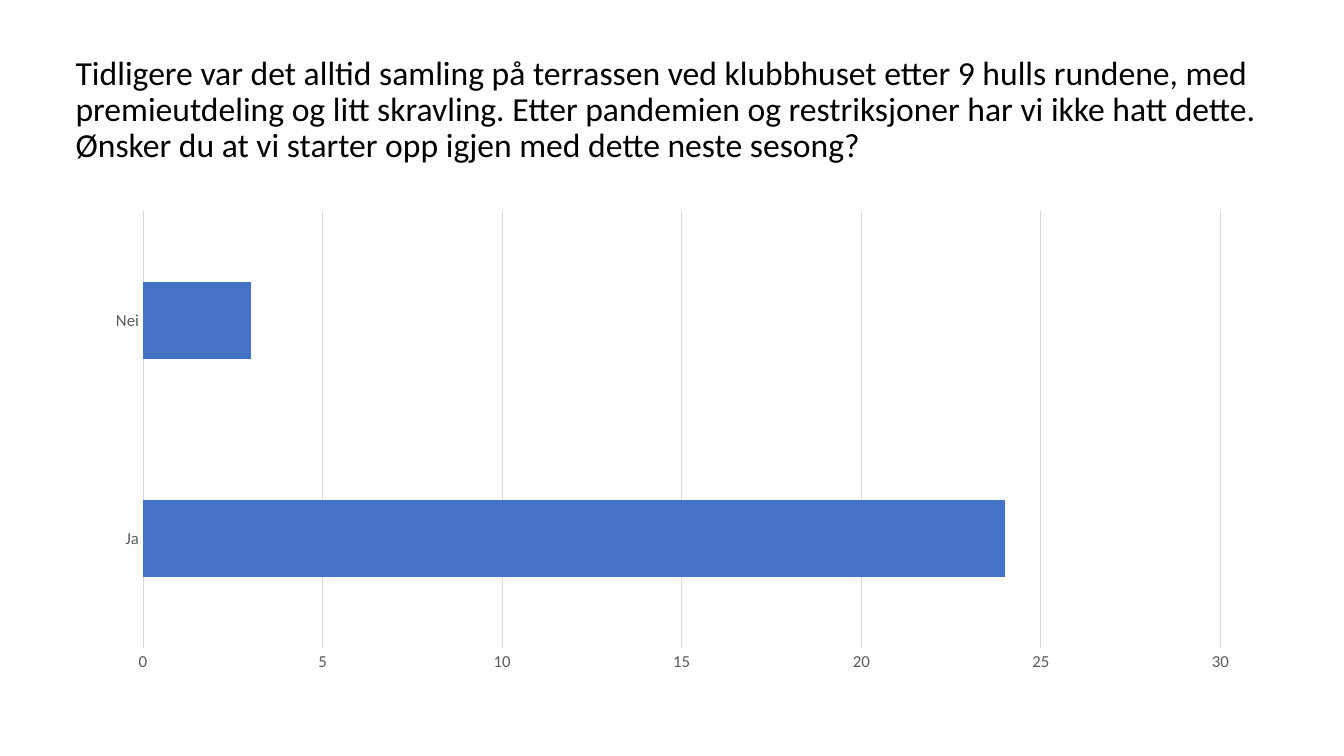
import pptx
import pptx.chart.data
import pptx.dml.color
import pptx.enum.chart
import pptx.enum.text
import pptx.util
from pptx.util import Inches, Pt

QUESTION = (
    "Tidligere var det alltid samling på terrassen ved klubbhuset etter 9 hulls rundene, "
    "med premieutdeling og litt skravling. Etter pandemien og restriksjoner har vi ikke "
    "hatt dette. Ønsker du at vi starter opp igjen med dette neste sesong?"
)
ANSWERS = {"Ja": 24, "Nei": 3}
COLOURS = {"title": "000000", "bar": "4472C4", "label": "595959", "grid": "D9D9D9"}
FONT = "Calibri"
TITLE_BOX = (0.65, 0.37, 12.04, 1.45)
CHART_BOX = (0.92, 2, 11.5, 4.76)


def colour(name):
    return pptx.dml.color.RGBColor.from_string(COLOURS[name])


def style_font(font, size, colour_name):
    font.name = FONT
    font.size = Pt(size)
    font.color.rgb = colour(colour_name)


def style_line(line):
    line.color.rgb = colour("grid")
    line.width = Pt(0.75)


def add_question(page):
    title = page.shapes.title
    title.left, title.top, title.width, title.height = map(Inches, TITLE_BOX)
    frame = title.text_frame
    frame.text = QUESTION
    frame.word_wrap = True
    frame.auto_size = pptx.enum.text.MSO_AUTO_SIZE.NONE
    frame.vertical_anchor = pptx.enum.text.MSO_ANCHOR.MIDDLE
    para = frame.paragraphs[0]
    para.alignment = pptx.enum.text.PP_ALIGN.LEFT
    para.line_spacing = 0.9
    style_font(para.font, 24, "title")


def add_answer_chart(page):
    data = pptx.chart.data.CategoryChartData()
    data.categories = list(ANSWERS)
    data.add_series("Series 1", list(ANSWERS.values()))
    chart = page.shapes.add_chart(
        pptx.enum.chart.XL_CHART_TYPE.BAR_CLUSTERED, *map(Inches, CHART_BOX), data
    ).chart
    chart.has_title = False
    chart.has_legend = False
    style_font(chart.font, 10, "title")

    plot = chart.plots[0]
    plot.gap_width = 182
    plot.vary_by_categories = False
    bars = plot.series[0].format.fill
    bars.solid()
    bars.fore_color.rgb = colour("bar")

    for axis in (chart.category_axis, chart.value_axis):
        axis.major_tick_mark = pptx.enum.chart.XL_TICK_MARK.NONE
        axis.minor_tick_mark = pptx.enum.chart.XL_TICK_MARK.NONE
        style_font(axis.tick_labels.font, 12, "label")

    style_line(chart.category_axis.format.line)
    counts = chart.value_axis
    counts.minimum_scale, counts.maximum_scale, counts.major_unit = 0, 30, 5
    counts.format.line.fill.background()
    counts.has_major_gridlines = True
    style_line(counts.major_gridlines.format.line)


def main():
    deck = pptx.Presentation()
    deck.slide_width, deck.slide_height = Inches(13.33), Inches(7.5)
    title_only = deck.slide_layouts[5]
    page = deck.slides.add_slide(title_only)
    add_question(page)
    add_answer_chart(page)
    deck.save("out.pptx")


if __name__ == "__main__":
    main()
